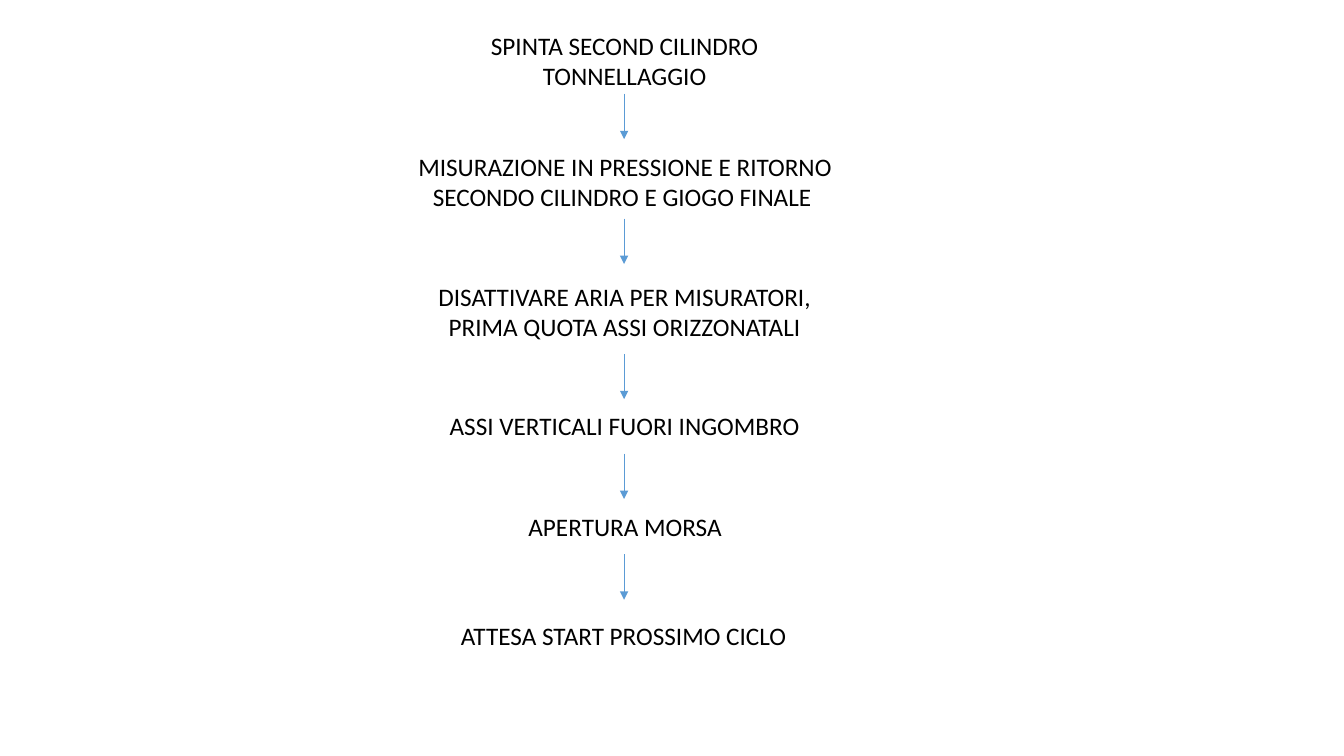
import pptx
import pptx.dml.color
import pptx.enum.shapes
import pptx.enum.text
import pptx.oxml
import pptx.oxml.ns
import pptx.util
from dataclasses import dataclass

Inches = pptx.util.Inches

# Text, left, top, width, number of lines
STEPS = [
    ("SPINTA SECOND CILINDRO TONNELLAGGIO", 4.34, 0.25, 3.71, 2),
    ("MISURAZIONE IN PRESSIONE E RITORNO SECONDO CILINDRO E GIOGO FINALE ", 3.92, 1.45, 4.56, 2),
    ("DISATTIVARE ARIA PER MISURATORI, PRIMA QUOTA ASSI ORIZZONATALI", 4.15, 2.74, 4.09, 2),
    ("ASSI VERTICALI FUORI INGOMBRO", 4.15, 4.02, 4.09, 1),
    ("APERTURA MORSA", 3.77, 5.02, 4.86, 1),
    ("ATTESA START PROSSIMO CICLO", 4.14, 6.1, 4.09, 1),
]
ARROW_TOPS = [0.93, 2.17, 3.51, 4.5, 5.5]
ARROW_X = 6.19
ARROW_LENGTH = 0.45
BOX_HEIGHTS = {1: 0.4, 2: 0.71}


@dataclass(frozen=True)
class Theme:
    text: str = "000000"
    arrow: str = "5B9BD5"
    font: str = "Calibri"
    text_size: float = 18
    arrow_width: float = 0.5


THEME = Theme()


def color(value):
    return pptx.dml.color.RGBColor.from_string(value)


def apply(target, values):
    for name, value in values.items():
        setattr(target, name, value)


def add_step(page, text, left, top, width, lines):
    box = page.shapes.add_textbox(
        Inches(left), Inches(top), Inches(width), Inches(BOX_HEIGHTS[lines]))
    frame = box.text_frame
    apply(frame, {"word_wrap": True,
                  "auto_size": pptx.enum.text.MSO_AUTO_SIZE.SHAPE_TO_FIT_TEXT})
    para = frame.paragraphs[0]
    para.alignment = pptx.enum.text.PP_ALIGN.CENTER
    span = para.add_run()
    span.text = text
    apply(span.font, {"name": THEME.font, "size": pptx.util.Pt(THEME.text_size)})
    span.font.color.rgb = color(THEME.text)


def add_arrow(page, top):
    arrow = page.shapes.add_connector(
        pptx.enum.shapes.MSO_CONNECTOR.STRAIGHT,
        Inches(ARROW_X), Inches(top), Inches(ARROW_X), Inches(top + ARROW_LENGTH))
    arrow.line.color.rgb = color(THEME.arrow)
    arrow.line.width = pptx.util.Pt(THEME.arrow_width)
    line = arrow.line._get_or_add_ln()
    head = pptx.oxml.parse_xml(
        f'<a:tailEnd {pptx.oxml.ns.nsdecls("a")} type="triangle"/>')
    line.append(head)
    line.addnext(pptx.oxml.parse_xml(
        f'<a:effectLst {pptx.oxml.ns.nsdecls("a")}/>'))


def main():
    deck = pptx.Presentation()
    apply(deck, {"slide_width": Inches(13.33), "slide_height": Inches(7.5)})
    blank_layout = deck.slide_layouts[6]
    page = deck.slides.add_slide(blank_layout)
    for step in STEPS:
        add_step(page, *step)
    for top in ARROW_TOPS:
        add_arrow(page, top)
    deck.save("out.pptx")


if __name__ == "__main__":
    main()
